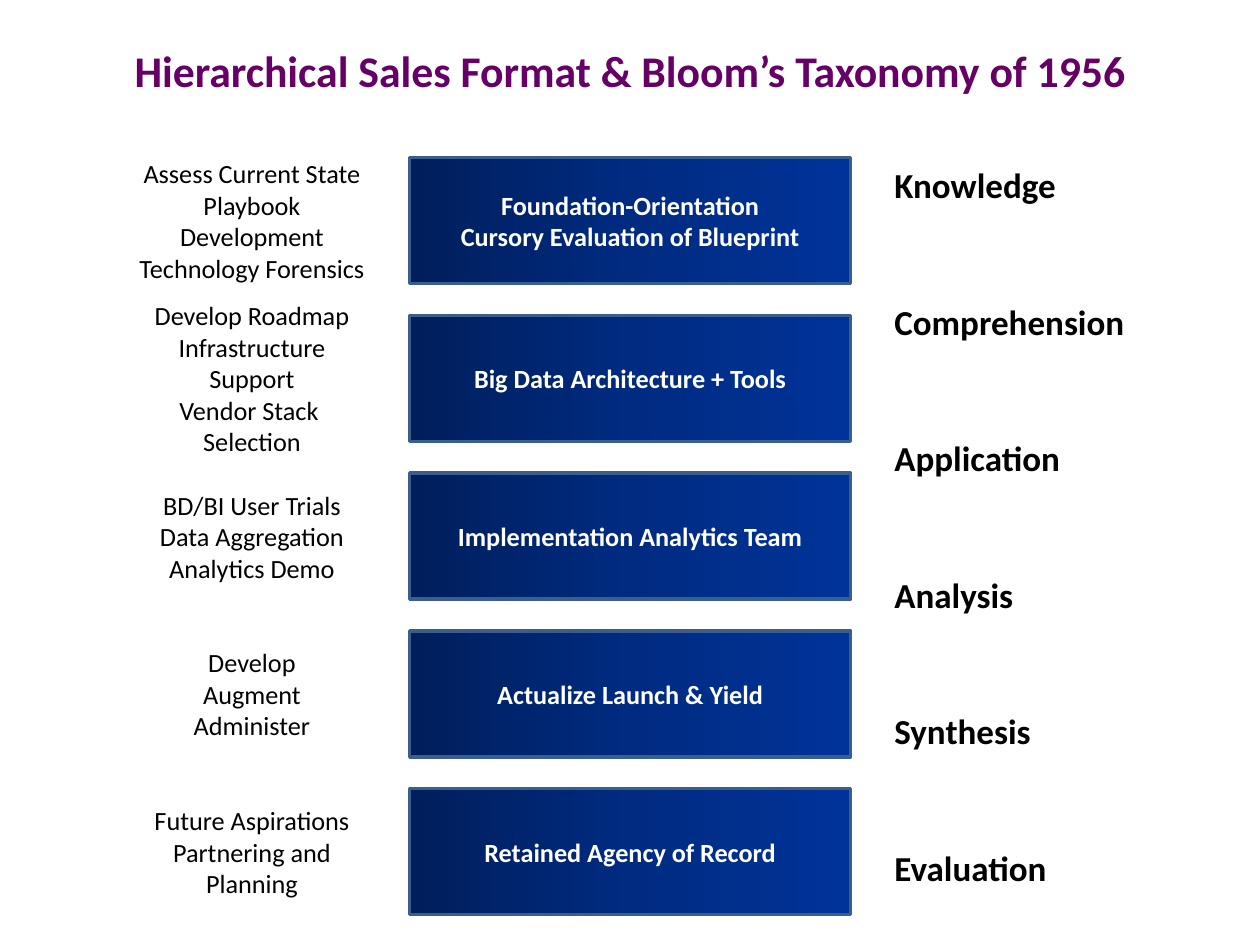
from copy import deepcopy

from pptx import Presentation
from pptx.dml.color import RGBColor
from pptx.enum.shapes import MSO_SHAPE
from pptx.enum.text import MSO_ANCHOR, MSO_AUTO_SIZE, PP_ALIGN
from pptx.oxml.ns import qn
from pptx.util import Cm, Pt

FONT = "Calibri"
BLACK = "000000"
WHITE = "FFFFFF"
PURPLE = "660066"
BORDER = "3A5F8C"
GRADIENT = [(0, "001E5B"), (0.5, "002B81"), (1, "003399")]

FIRST_TOP = 3.18
ROW_STEP = 3.18
ROW_HEIGHT = 2.54

STAGES = [
    (["Assess Current State", "Playbook Development", "Technology Forensics"],
     ["Foundation-Orientation", "Cursory Evaluation of Blueprint"]),
    (["Develop Roadmap", "Infrastructure Support", "Vendor Stack  Selection"],
     ["Big Data Architecture + Tools"]),
    (["BD/BI User Trials", "Data Aggregation", "Analytics Demo"],
     ["Implementation Analytics Team"]),
    (["Develop", "Augment", "Administer"],
     ["Actualize Launch & Yield"]),
    (["Future Aspirations", "Partnering and", "Planning"],
     ["Retained Agency of Record"]),
]
TAXONOMY = ["Knowledge", "Comprehension", "Application",
            "Analysis", "Synthesis", "Evaluation"]


def color(value):
    """Return the colour for a hex string."""
    return RGBColor.from_string(value)


def write_lines(frame, lines, size, ink, bold=False,
                align=PP_ALIGN.CENTER, space_after=0):
    """Write one paragraph per line into a text frame."""
    for index, line in enumerate(lines):
        paragraph = frame.paragraphs[0] if index == 0 else frame.add_paragraph()
        paragraph.text = line
        paragraph.alignment = align
        paragraph.space_after = Pt(space_after)
        font = paragraph.font
        font.name, font.size, font.bold = FONT, Pt(size), bold
        font.color.rgb = color(ink)


def add_text(page, left, top, width, height, lines, size, ink,
             anchor=MSO_ANCHOR.MIDDLE, **style):
    """Add an unwrapped text box and return its text frame."""
    box = page.shapes.add_textbox(Cm(left), Cm(top), Cm(width), Cm(height))
    frame = box.text_frame
    frame.word_wrap = False
    frame.vertical_anchor = anchor
    write_lines(frame, lines, size, ink, **style)
    return frame


def fill_gradient(shape):
    """Fill a shape with the three-stop blue gradient."""
    shape.fill.gradient()
    shape.fill.gradient_angle = 0
    stops = shape.element.spPr.find(qn("a:gradFill")).find(qn("a:gsLst"))
    stops.insert(1, deepcopy(stops[0]))
    for stop, (position, value) in zip(shape.fill.gradient_stops, GRADIENT):
        stop.position = position
        stop.color.rgb = color(value)


def add_stage(page, top, lines):
    """Add a blue stage rectangle with its bold label."""
    stage = page.shapes.add_shape(
        MSO_SHAPE.RECTANGLE, Cm(8.26), Cm(top), Cm(8.89), Cm(ROW_HEIGHT))
    stage.shadow.inherit = False
    fill_gradient(stage)
    stage.line.color.rgb = color(BORDER)
    stage.line.width = Pt(2)
    stage.text_frame.word_wrap = True
    stage.text_frame.vertical_anchor = MSO_ANCHOR.MIDDLE
    write_lines(stage.text_frame, lines, 15, WHITE, bold=True)


def main():
    """Build the slide and save it."""
    deck = Presentation()
    deck.slide_width, deck.slide_height = Cm(25.4), Cm(19.05)
    page = deck.slides.add_slide(deck.slide_layouts[6])

    add_text(page, 1.27, 0.64, 22.86, 1.55,
             ["Hierarchical Sales Format & Bloom’s Taxonomy of 1956"],
             25, PURPLE, bold=True)
    for row, (tasks, label) in enumerate(STAGES):
        top = FIRST_TOP + row * ROW_STEP
        add_stage(page, top, label)
        add_text(page, 2.54, top, 5.08, ROW_HEIGHT, tasks, 15, BLACK)
    levels = add_text(page, 17.78, FIRST_TOP, 5.18, 15.01, TAXONOMY, 20, BLACK,
                      anchor=MSO_ANCHOR.TOP, bold=True,
                      align=PP_ALIGN.LEFT, space_after=54)
    levels.auto_size = MSO_AUTO_SIZE.SHAPE_TO_FIT_TEXT

    deck.save("out.pptx")


if __name__ == "__main__":
    main()
